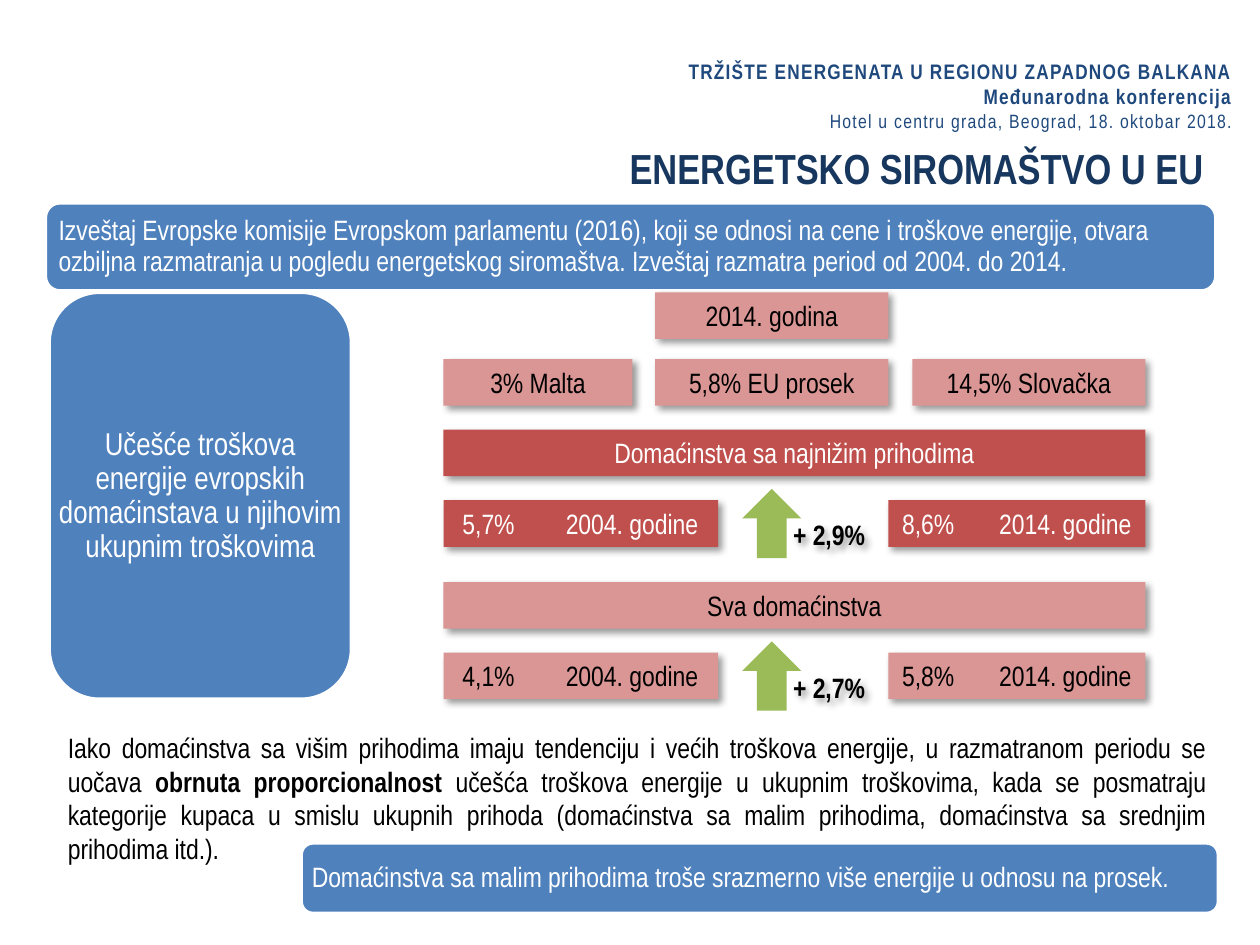
import pptx
import pptx.dml.color
import pptx.enum.shapes
import pptx.enum.text
import pptx.oxml
import pptx.oxml.ns
import pptx.util

FONT = "Arial Narrow"
COLUMNS, ROWS = 100, 75
WIDTH, HEIGHT = pptx.util.Inches(10), pptx.util.Inches(7.5)
BLUE, RED, PINK, GREEN = "4F81BD", "C0504D", "D99694", "9BBB59"
WHITE, BLACK, NAVY, TITLE_NAVY = "FFFFFF", "000000", "1F497D", "17375E"
LEFT, RIGHT, BAR_HEIGHT = 35.2, 90.9, 3.7
SHAPES = pptx.enum.shapes.MSO_SHAPE
ALIGN = pptx.enum.text.PP_ALIGN
MIDDLE = pptx.enum.text.MSO_ANCHOR.MIDDLE
TOP = pptx.enum.text.MSO_ANCHOR.TOP


def colour(value):
    return pptx.dml.color.RGBColor.from_string(value)


def place(left, top, width, height):
    column, row = WIDTH / COLUMNS, HEIGHT / ROWS
    return [round(length) for length in (left * column, top * row, width * column, height * row)]


def apply(target, values):
    for name, value in values.items():
        setattr(target, name, value)


def add_spans(para, spans, size, tint):
    for words, values in spans:
        span = para.add_run()
        span.text = words
        apply(span.font, {"name": FONT, "size": pptx.util.Pt(size), **values})
        span.font.color.rgb = colour(tint)


def write(box, spans, size=16, tint=BLACK, align=ALIGN.CENTER, anchor=TOP, spacing=None, **margins):
    frame = box.text_frame
    apply(frame, {"word_wrap": True, "vertical_anchor": anchor})
    apply(frame, {name: pptx.util.Inches(value) for name, value in margins.items()})
    para = frame.paragraphs[0]
    apply(para, {"alignment": align, "line_spacing": spacing})
    add_spans(para, spans, size, tint)
    return para


def add_text(page, area, spans, **values):
    box = page.shapes.add_textbox(*place(*area))
    return box, write(box, spans, **values)


def add_shape(page, kind, area, fill, line=None):
    shape = page.shapes.add_shape(kind, *place(*area))
    shape.shadow.inherit = False
    shape.fill.solid()
    shape.fill.fore_color.rgb = colour(fill)
    if line:
        shape.line.color.rgb = colour(line)
        shape.line.width = pptx.util.Pt(2)
    else:
        shape.line.fill.background()
    return shape


def add_shadow(shape):
    shape.shadow.inherit = False
    effects = shape.element.spPr.find(pptx.oxml.ns.qn("a:effectLst"))
    effects.append(pptx.oxml.parse_xml(
        f'<a:outerShdw {pptx.oxml.ns.nsdecls("a")} blurRad="50800" dist="38100" '
        'dir="2700000" algn="tl" rotWithShape="0"><a:srgbClr val="000000">'
        '<a:alpha val="40000"/></a:srgbClr></a:outerShdw>'))


def add_panel(page, area, words, size, align, inset, gap_x, gap_y):
    left, top, width, height = area
    add_shape(page, SHAPES.ROUNDED_RECTANGLE, area, BLUE, WHITE)
    inner = (left + gap_x, top + gap_y, width - 2 * gap_x, height - 2 * gap_y)
    sides = {f"margin_{side}": inset for side in ("left", "top", "right", "bottom")}
    add_text(page, inner, [(words, {})], size=size, tint=WHITE, align=align,
             anchor=MIDDLE, spacing=0.9, **sides)


def add_bar(page, left, top, width, words, fill=PINK, tint=BLACK, **values):
    bar = add_shape(page, SHAPES.RECTANGLE, (left, top, width, BAR_HEIGHT), fill)
    add_shadow(bar)
    return write(bar, [(words, {})], tint=tint, **values)


def add_tabbed_bar(page, left, top, width, words, inset, stop, fill, tint):
    para = add_bar(page, left, top, width, words, fill, tint, align=ALIGN.LEFT, margin_left=inset)
    para._p.get_or_add_pPr().append(pptx.oxml.parse_xml(
        f'<a:tabLst {pptx.oxml.ns.nsdecls("a")}>'
        f'<a:tab pos="{pptx.util.Inches(stop)}" algn="l"/></a:tabLst>'))


def add_comparison(page, top, heading, before, after, change, fill, tint):
    row = top + 5.6
    add_bar(page, LEFT, top, RIGHT - LEFT, heading, fill, tint)
    add_tabbed_bar(page, LEFT, row, 21.8, f"{before}\t2004. godine", 0.15, 0.82, fill, tint)
    add_tabbed_bar(page, 70.5, row, 20.4, f"{after}\t2014. godine", 0.11, 0.77, fill, tint)
    add_shape(page, SHAPES.UP_ARROW, (58.9, row - 0.9, 4.7, 5.5), GREEN)
    label, _ = add_text(page, (61.5, row + 0.9, 8.6, BAR_HEIGHT), [(change, {"bold": True})])
    add_shadow(label)


def add_header(page):
    _, para = add_text(page, (47.6, 3.6, 51.2, 7.9), [], align=ALIGN.RIGHT, anchor=MIDDLE)
    lines = [("TRŽIŠTE ENERGENATA U REGIONU ZAPADNOG BALKANA", 12, True),
             ("Međunarodna konferencija", 12, True),
             ("Hotel u centru grada, Beograd, 18. oktobar 2018.", 11, False)]
    for number, (words, size, bold) in enumerate(lines):
        if number:
            para.add_line_break()
        add_spans(para, [(words, {"bold": bold})], size, NAVY)
    for span in para.runs:
        span.font._element.set("spc", "70")
    add_text(page, (3.6, 10.5, 92.9, 5.6), [("ENERGETSKO SIROMAŠTVO U EU", {"bold": True})],
             size=24, tint=TITLE_NAVY, align=ALIGN.RIGHT, anchor=MIDDLE)


def main():
    deck = pptx.Presentation()
    apply(deck, {"slide_width": WIDTH, "slide_height": HEIGHT})
    page = deck.slides.add_slide(deck.slide_layouts[6])

    add_header(page)
    add_panel(page, (3.6, 16.1, 92.9, 7),
              "Izveštaj Evropske komisije Evropskom parlamentu (2016), koji se odnosi na cene i "
              "troškove energije, otvara ozbiljna razmatranja u pogledu energetskog siromaštva. "
              "Izveštaj razmatra period od 2004. do 2014.", 16, ALIGN.LEFT, 0.07, 0.35, 0.35)
    add_panel(page, (3.9, 23.2, 24, 32.3),
              "Učešće troškova energije evropskih domaćinstava u njihovim ukupnim troškovima",
              18, ALIGN.CENTER, 0.06, 0.1, 1.55)

    for left, top, width, words in [(LEFT, 28.5, 15, "3% Malta"),
                                    (52, 28.5, 18.5, "5,8% EU prosek"),
                                    (72.4, 28.5, 18.5, "14,5% Slovačka"),
                                    (52, 23.2, 18.5, "2014. godina")]:
        add_bar(page, left, top, width, words)

    add_comparison(page, 34.1, "Domaćinstva sa najnižim prihodima",
                   "5,7%", "8,6%", "+ 2,9%", RED, WHITE)
    add_comparison(page, 46.2, "Sva domaćinstva", "4,1%", "5,8%", "+ 2,7%", PINK, BLACK)

    add_text(page, (4.4, 57.5, 92.4, 11.8), [
        ("Iako domaćinstva sa višim prihodima imaju tendenciju i većih troškova energije, "
         "u razmatranom periodu se uočava ", {}),
        ("obrnuta proporcionalnost", {"bold": True}),
        (" učešća troškova energije u ukupnim troškovima, kada se posmatraju kategorije kupaca "
         "u smislu ukupnih prihoda (domaćinstva sa malim prihodima, domaćinstva sa srednjim "
         "prihodima itd.).", {})], align=ALIGN.JUSTIFY)
    add_panel(page, (23.9, 66.9, 72.8, 5.6),
              "Domaćinstva sa malim prihodima troše srazmerno više energije u odnosu na prosek.",
              16, ALIGN.LEFT, 0.06, 0.25, 0.25)
    deck.save("out.pptx")


if __name__ == "__main__":
    main()
